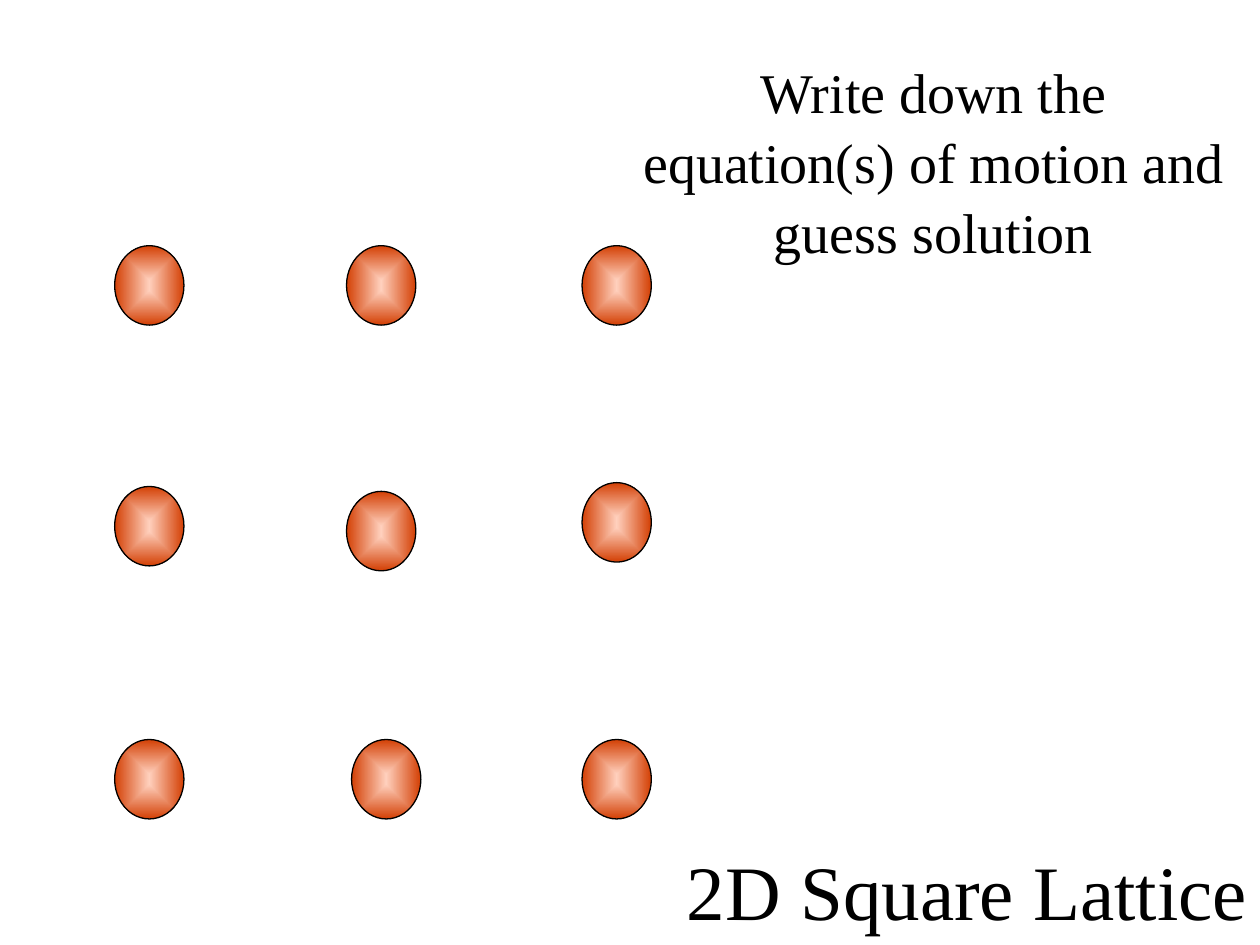
from typing import NamedTuple

from pptx import Presentation
from pptx.dml.color import RGBColor
from pptx.enum.shapes import MSO_SHAPE
from pptx.enum.text import MSO_ANCHOR, PP_ALIGN
from pptx.oxml import parse_xml
from pptx.oxml.ns import nsdecls
from pptx.slide import Slide
from pptx.util import Pt

BLACK = RGBColor(0x00, 0x00, 0x00)
PEACH = RGBColor(0xFF, 0xD0, 0xBD)
RUST = RGBColor(0xD3, 0x40, 0x05)
FONT = "Times New Roman"
ATOM_WIDTH, ATOM_HEIGHT = 39.6, 45.4
COLUMNS = (65.5, 198, 332.6)
ROWS = (140.4, 278, 422.6)
DISPLACEMENTS = {(1, 1): (0, 2.8), (1, 2): (0, -2.2), (2, 1): (2.9, 0)}


class Caption(NamedTuple):
    text: str
    left: float
    top: float
    width: float
    height: float
    size: float
    align: PP_ALIGN
    anchor: MSO_ANCHOR
    inset_top: float
    line_spacing: float


CAPTIONS = (
    Caption("2D Square Lattice", 151.2, 477.4, 568.8, 62.6, 44,
            PP_ALIGN.RIGHT, MSO_ANCHOR.MIDDLE, 3.6, 1),
    Caption("Write down the equation(s) of motion and guess solution",
            360, 25.2, 347, 146.9, 32,
            PP_ALIGN.CENTER, MSO_ANCHOR.TOP, 6, 1.04),
)


def draw_caption(page: Slide, caption: Caption) -> None:
    box = page.shapes.add_textbox(Pt(caption.left), Pt(caption.top),
                                  Pt(caption.width), Pt(caption.height))
    frame = box.text_frame
    frame.word_wrap = True
    frame.vertical_anchor = caption.anchor
    frame.margin_top = Pt(caption.inset_top)
    frame.text = caption.text
    para = frame.paragraphs[0]
    para.alignment = caption.align
    para.line_spacing = caption.line_spacing
    span = para.runs[0]
    span.font.name = FONT
    span.font.size = Pt(caption.size)
    span.font.color.rgb = BLACK


def draw_atom(page: Slide, left: float, top: float) -> None:
    atom = page.shapes.add_shape(MSO_SHAPE.OVAL, Pt(left), Pt(top),
                                 Pt(ATOM_WIDTH), Pt(ATOM_HEIGHT))
    atom.shadow.inherit = False
    atom.line.color.rgb = BLACK
    atom.line.width = Pt(0.75)
    gradient = parse_xml(
        f'<a:gradFill {nsdecls("a")} rotWithShape="1"><a:gsLst>'
        f'<a:gs pos="0"><a:srgbClr val="{PEACH}"/></a:gs>'
        f'<a:gs pos="100000"><a:srgbClr val="{RUST}"/></a:gs></a:gsLst>'
        '<a:path path="shape"><a:fillToRect l="50000" t="50000" '
        'r="50000" b="50000"/></a:path></a:gradFill>'
    )
    atom.element.spPr.prstGeom.addnext(gradient)


def draw_lattice(page: Slide) -> None:
    for row, top in enumerate(ROWS):
        for column, left in enumerate(COLUMNS):
            shift_x, shift_y = DISPLACEMENTS.get((row, column), (0, 0))
            draw_atom(page, left + shift_x, top + shift_y)


def main() -> None:
    deck = Presentation()
    deck.slide_width, deck.slide_height = Pt(720), Pt(540)
    page = deck.slides.add_slide(deck.slide_layouts[6])
    for caption in CAPTIONS:
        draw_caption(page, caption)
    draw_lattice(page)
    deck.save("out.pptx")


if __name__ == "__main__":
    main()
